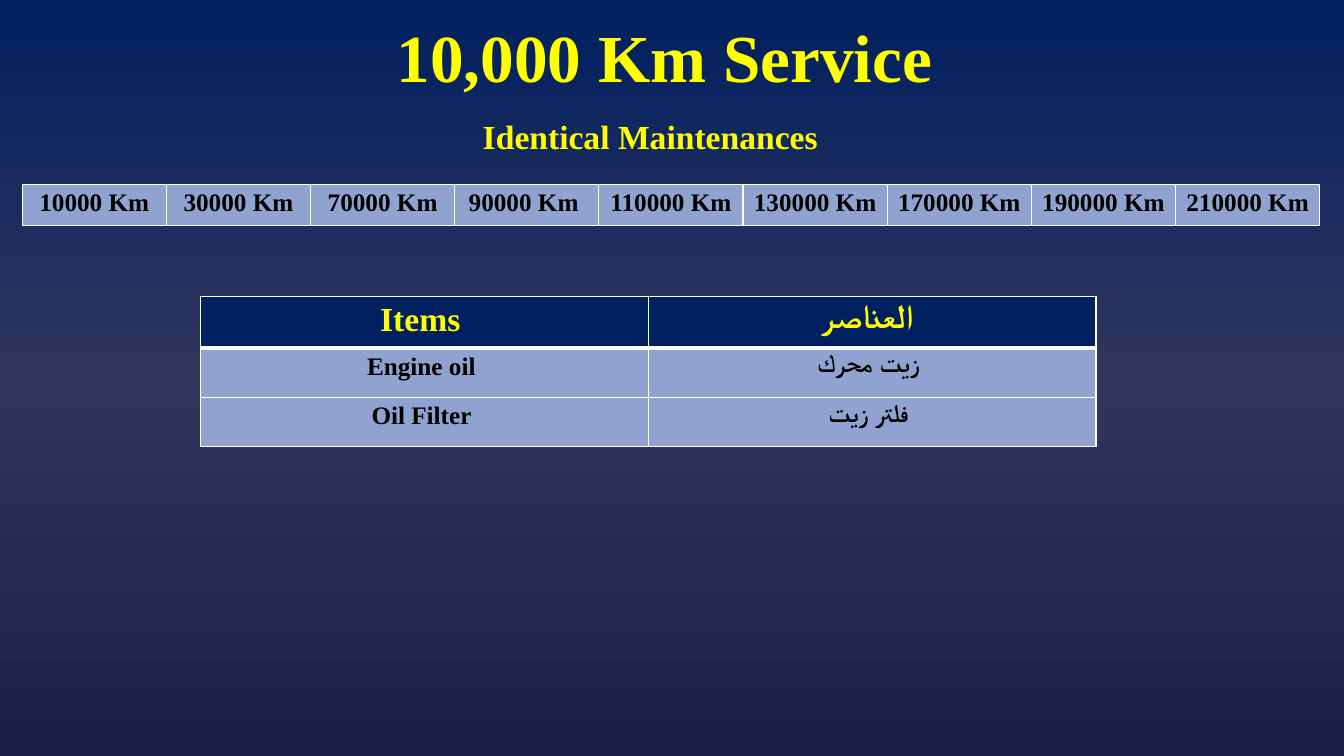
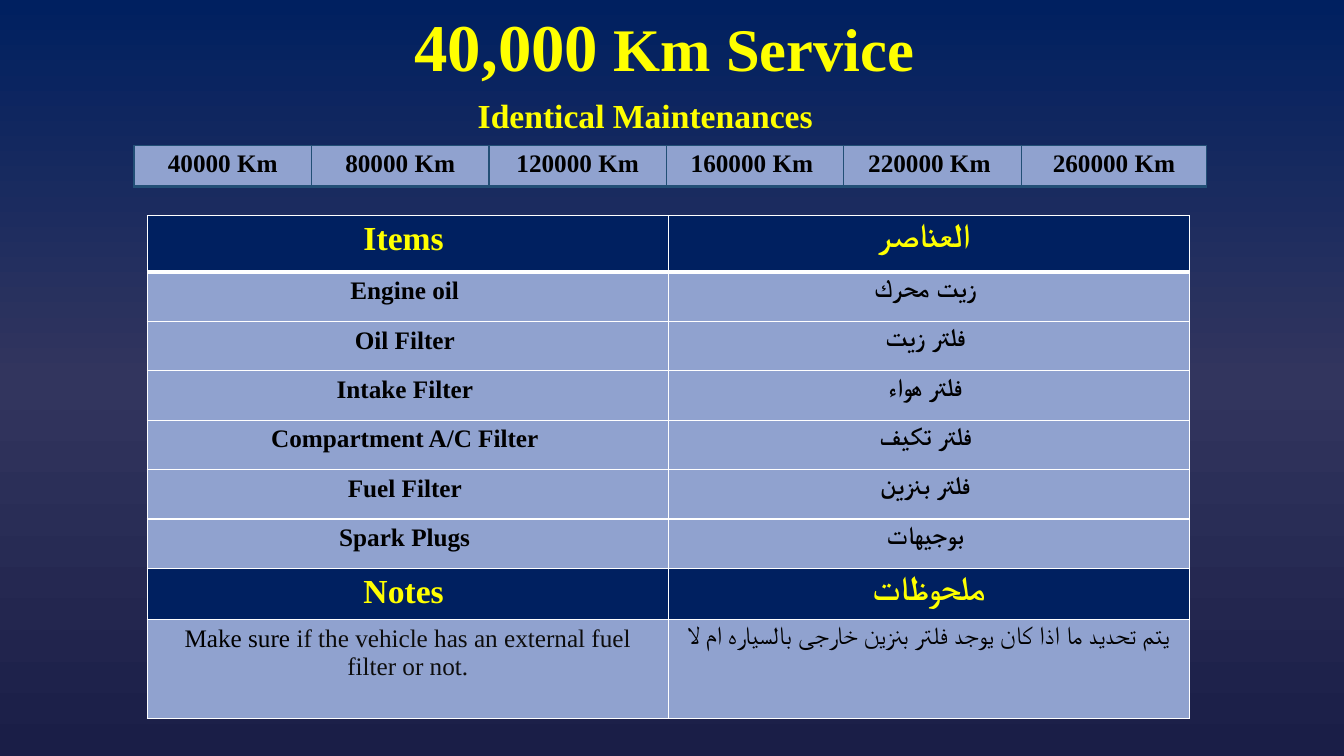
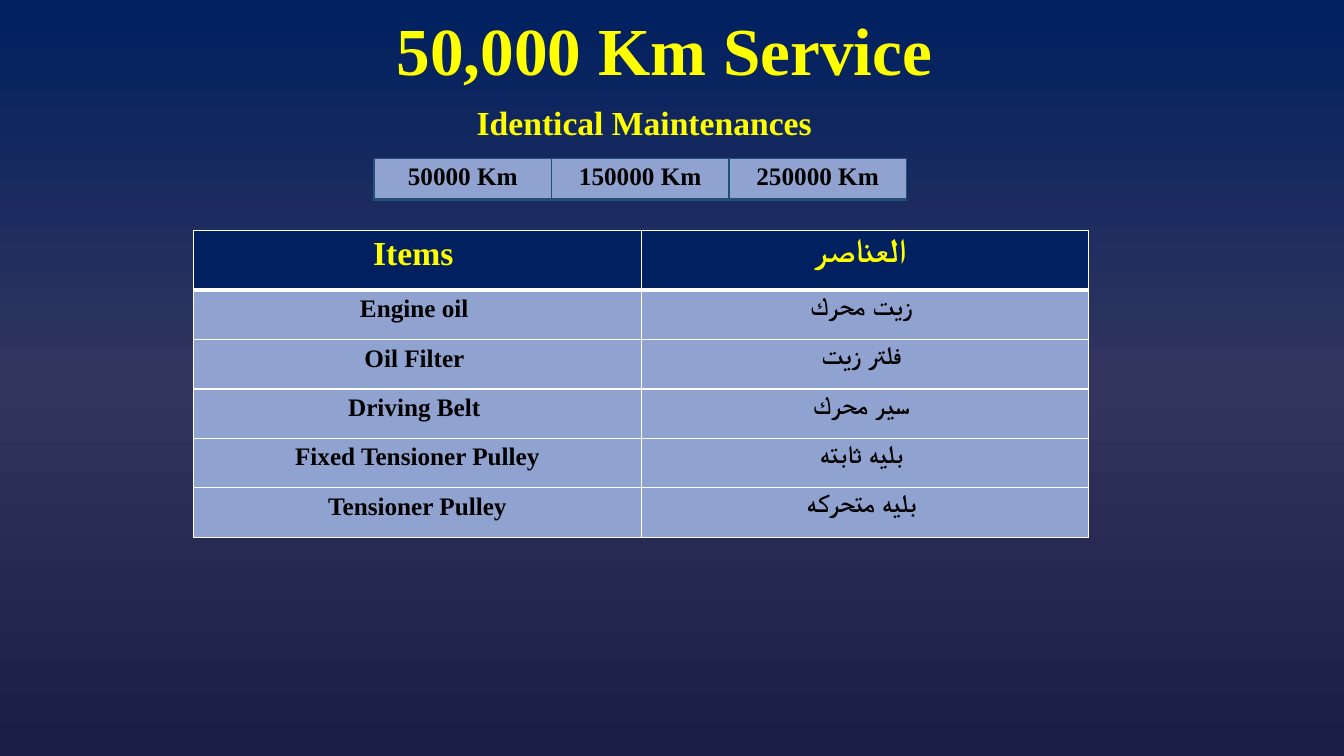
from copy import deepcopy
from dataclasses import dataclass
from typing import NamedTuple

from pptx import Presentation
from pptx.dml.color import RGBColor
from pptx.enum.text import MSO_ANCHOR, PP_ALIGN
from pptx.oxml.ns import qn
from pptx.util import Inches, Pt
from lxml import etree

CENTER = PP_ALIGN.CENTER
MIDDLE, TOP = MSO_ANCHOR.MIDDLE, MSO_ANCHOR.TOP


# Theme
class Style(NamedTuple):
    size: float
    color: str
    bold: bool = True


class Run(NamedTuple):
    text: str
    style: Style


class Borders(NamedTuple):
    color: str
    top: float = 1
    bottom: float = 1


@dataclass(frozen=True)
class Theme:
    font: str = "Times New Roman"
    navy: str = "002060"
    light_blue: str = "90A2CF"
    white: str = "FFFFFF"
    backdrop: tuple[str, ...] = ("002060", "32355E", "1A1E47")
    title: Style = Style(48, "FFFF00")
    title_number: Style = Style(47.7, "FFFF00")
    title_unit: Style = Style(43.2, "FFFF00")
    heading: Style = Style(24, "FFFF00")
    item: Style = Style(18, "000000")
    note: Style = Style(18, "000000", False)
    note_detail: Style = Style(18, "0D0D0D", False)
    white_grid: Borders = Borders("FFFFFF")
    above_rule: Borders = Borders("FFFFFF", bottom=3)
    below_rule: Borders = Borders("FFFFFF", top=3)
    steel_grid: Borders = Borders("224F76", bottom=2)


THEME = Theme()


# Content
class Cell(NamedTuple):
    runs: list[Run]
    fill: str
    borders: Borders


class Row(NamedTuple):
    height: float
    cells: list[Cell]


@dataclass(frozen=True)
class DistanceStrip:
    left: float
    top: float
    column: float
    last_column: float
    borders: Borders
    distances: list[str]


@dataclass(frozen=True)
class ItemTable:
    left: float
    top: float
    column: float
    header_height: float
    header: tuple[str, str]
    items: list[tuple[str, str]]
    notes: tuple[list[Run], list[Run]] | None = None


@dataclass(frozen=True)
class Service:
    title: list[Run]
    title_height: float
    subtitle_left: float
    subtitle_top: float
    strip: DistanceStrip
    table: ItemTable


STRIP_HEIGHT, ITEM_HEIGHT, NOTES_HEIGHT, NOTE_HEIGHT = 0.41, 0.49, 0.51, 0.98
HEADER = ("Items ", "العناصر ")
NOTES_HEADER = ("Notes ", "ملحوظات")
OIL_ITEMS = [("Engine oil ", "زيت محرك "), ("Oil Filter ", "فلتر زيت ")]

SERVICES = [
    Service(
        [Run("10,000 Km Service", THEME.title)], 1, 3.72, 1.1,
        DistanceStrip(0.22, 1.83, 1.43, 1.43, THEME.white_grid, [
            "10000 Km", "30000 Km", "70000 Km", "90000 Km ", "110000 Km ",
            "130000 Km", "170000 Km", "190000 Km", "210000 Km "]),
        ItemTable(1.99, 2.94, 4.44, 0.51, HEADER, OIL_ITEMS),
    ),
    Service(
        [Run("40,000", THEME.title_number), Run(" Km Service", THEME.title_unit)],
        0.8, 3.67, 0.89,
        DistanceStrip(1.33, 1.44, 1.76, 1.84, THEME.steel_grid, [
            "40000 Km", "80000 Km", "120000 Km", "160000 Km ", "220000 Km ",
            "260000 Km"]),
        ItemTable(
            1.46, 2.14, 5.17, 0.56, HEADER,
            OIL_ITEMS + [
                ("Intake Filter ", "فلتر هواء "),
                ("Compartment A/C Filter ", "فلتر تكيف "),
                ("Fuel Filter ", "فلتر بنزين "),
                ("Spark Plugs ", "بوجيهات "),
            ],
            ([Run("Make sure ", THEME.note),
              Run("if the vehicle has an external fuel filter or not.",
                  THEME.note_detail)],
             [Run("يتم تحديد ما اذا كان يوجد فلتر بنزين خارجى بالسياره ام لا",
                  THEME.note)]),
        ),
    ),
    Service(
        [Run("50,000 Km Service", THEME.title)], 0.86, 3.66, 0.96,
        DistanceStrip(3.71, 1.57, 1.76, 1.76, THEME.steel_grid, [
            "50000 Km", "150000 Km", "250000 Km"]),
        ItemTable(
            1.92, 2.29, 4.44, 0.59, HEADER,
            OIL_ITEMS + [
                ("Driving Belt ", "سير محرك "),
                ("Fixed Tensioner Pulley", "بليه ثابته "),
                ("Tensioner Pulley", "بليه متحركه "),
            ],
        ),
    ),
]


# Drawing
def paint_backdrop(master) -> None:
    """Give all slides the vertical three-colour gradient."""
    fill = master.background.fill
    fill.gradient()
    fill.gradient_angle = 270
    stop_list = master.element.find(".//" + qn("a:gsLst"))
    stop_list.append(deepcopy(stop_list[-1]))
    last = len(THEME.backdrop) - 1
    for index, (stop, color) in enumerate(zip(fill.gradient_stops, THEME.backdrop)):
        stop.color.rgb = RGBColor.from_string(color)
        stop.position = index / last


def write(frame, runs: list[Run], line_spacing: float = 1.0) -> None:
    paragraph = frame.paragraphs[0]
    for name, value in {"alignment": CENTER, "line_spacing": line_spacing}.items():
        setattr(paragraph, name, value)
    for text, style in runs:
        run = paragraph.add_run()
        run.text = text
        font_format = {"name": THEME.font, "size": Pt(style.size), "bold": style.bold}
        for name, value in font_format.items():
            setattr(run.font, name, value)
        run.font.color.rgb = RGBColor.from_string(style.color)


def add_text(slide, left: float, top: float, width: float, height: float,
             runs: list[Run], anchor=TOP, line_spacing: float = 1.0) -> None:
    box = slide.shapes.add_textbox(*map(Inches, (left, top, width, height)))
    for name, value in {"word_wrap": True, "vertical_anchor": anchor}.items():
        setattr(box.text_frame, name, value)
    write(box.text_frame, runs, line_spacing)


def draw_borders(cell, borders: Borders) -> None:
    properties = cell._tc.get_or_add_tcPr()
    widths = {"a:lnL": 1, "a:lnR": 1, "a:lnT": borders.top, "a:lnB": borders.bottom}
    for side, width in widths.items():
        line = etree.SubElement(properties, qn(side), w=str(Pt(width)))
        solid = etree.SubElement(line, qn("a:solidFill"))
        etree.SubElement(solid, qn("a:srgbClr"), val=borders.color)


def add_grid(slide, left: float, top: float, columns: list[float],
             rows: list[Row]) -> None:
    height = sum(row.height for row in rows)
    table = slide.shapes.add_table(
        len(rows), len(columns), Inches(left), Inches(top),
        Inches(sum(columns)), Inches(height)).table
    for name, value in {"first_row": False, "horz_banding": False}.items():
        setattr(table, name, value)
    for column, width in zip(table.columns, columns):
        column.width = Inches(width)
    for table_row, row in zip(table.rows, rows):
        table_row.height = Inches(row.height)
        for cell, content in zip(table_row.cells, row.cells):
            draw_borders(cell, content.borders)
            cell.fill.solid()
            cell.fill.fore_color.rgb = RGBColor.from_string(content.fill)
            write(cell.text_frame, content.runs)


def add_strip(slide, strip: DistanceStrip) -> None:
    columns = [strip.column] * (len(strip.distances) - 1) + [strip.last_column]
    cells = [Cell([Run(distance, THEME.item)], THEME.light_blue, strip.borders)
             for distance in strip.distances]
    add_grid(slide, strip.left, strip.top, columns, [Row(STRIP_HEIGHT, cells)])


def text_row(height: float, texts: tuple[str, str], style: Style, fill: str,
             borders: Borders) -> Row:
    return Row(height, [Cell([Run(text, style)], fill, borders) for text in texts])


def add_items(slide, table: ItemTable) -> None:
    rows = [text_row(table.header_height, table.header, THEME.heading, THEME.navy,
                     THEME.above_rule)]
    for index, item in enumerate(table.items):
        borders = THEME.white_grid if index else THEME.below_rule
        rows.append(text_row(ITEM_HEIGHT, item, THEME.item, THEME.light_blue, borders))
    if table.notes:
        rows.append(text_row(NOTES_HEIGHT, NOTES_HEADER, THEME.heading, THEME.navy,
                             THEME.white_grid))
        rows.append(Row(NOTE_HEIGHT, [Cell(note, THEME.light_blue, THEME.white_grid)
                                      for note in table.notes]))
    add_grid(slide, table.left, table.top, [table.column] * 2, rows)


def add_service(slide, service: Service) -> None:
    add_text(slide, 0.84, 0.1, 11.5, service.title_height, service.title, MIDDLE, 0.9)
    add_strip(slide, service.strip)
    add_text(slide, service.subtitle_left, service.subtitle_top, 5.46, 0.5,
             [Run("Identical Maintenances", THEME.heading)])
    add_items(slide, service.table)


def main() -> None:
    deck = Presentation()
    deck.slide_width, deck.slide_height = Inches(13.33), Inches(7.5)
    paint_backdrop(deck.slide_master)
    blank = deck.slide_layouts[6]
    for service in SERVICES:
        add_service(deck.slides.add_slide(blank), service)
    deck.save("out.pptx")


if __name__ == "__main__":
    main()
